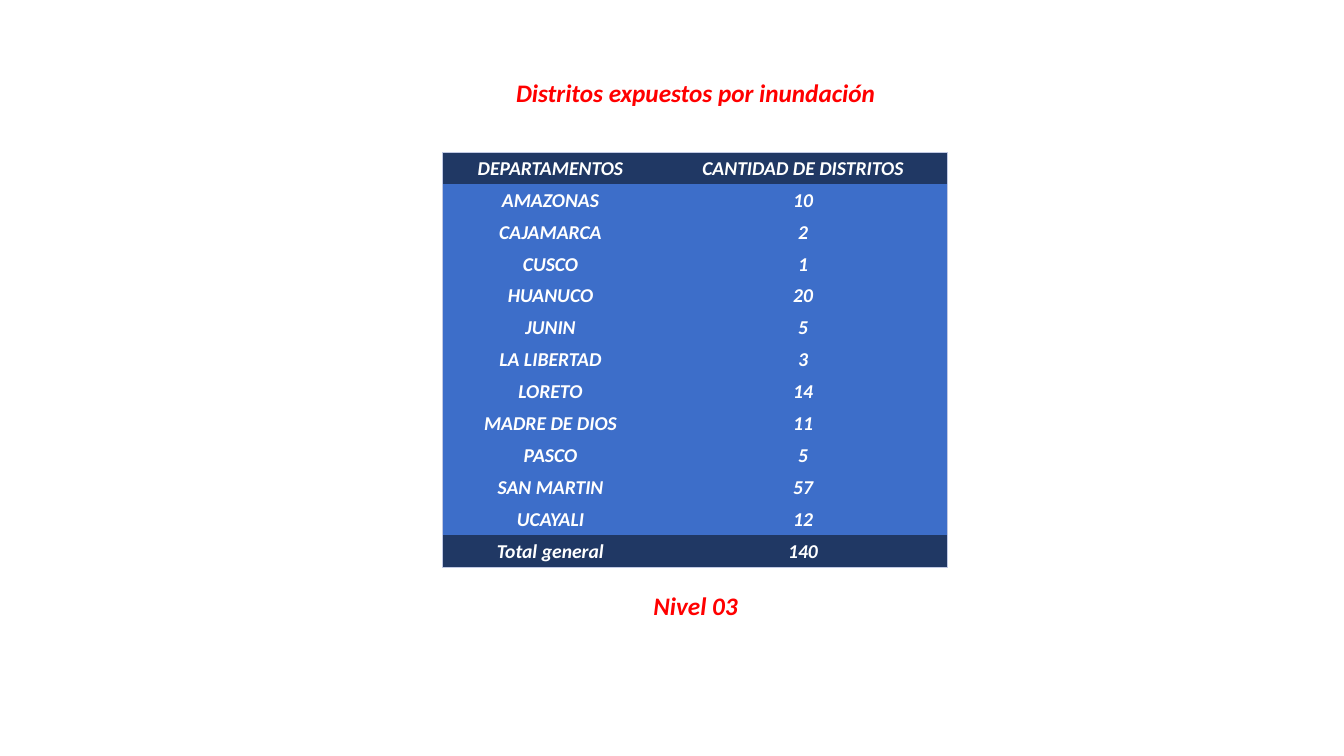
from lxml import etree
from pptx import Presentation
from pptx.dml.color import RGBColor
from pptx.enum.text import MSO_ANCHOR, MSO_AUTO_SIZE, PP_ALIGN
from pptx.oxml.ns import qn
from pptx.util import Inches, Pt

CENTER = PP_ALIGN.CENTER
MIDDLE = MSO_ANCHOR.MIDDLE
GROW = MSO_AUTO_SIZE.SHAPE_TO_FIT_TEXT

RED = RGBColor(0xFF, 0x00, 0x00)
WHITE = RGBColor(0xFF, 0xFF, 0xFF)
NAVY = RGBColor(0x20, 0x38, 0x64)
BLUE = RGBColor(0x3D, 0x6E, 0xC9)
PALE_BLUE = RGBColor(0xC1, 0xC9, 0xE4)

ROWS = [
    ("DEPARTAMENTOS", "CANTIDAD DE DISTRITOS"),
    ("AMAZONAS", "10"),
    ("CAJAMARCA", "2"),
    ("CUSCO", "1"),
    ("HUANUCO", "20"),
    ("JUNIN", "5"),
    ("LA LIBERTAD", "3"),
    ("LORETO", "14"),
    ("MADRE DE DIOS", "11"),
    ("PASCO", "5"),
    ("SAN MARTIN", "57"),
    ("UCAYALI", "12"),
    ("Total general", "140"),
]
COLUMN_WIDTHS = (2.14, 2.87)
TABLE_HEIGHT = 4.12


def write_text(frame, text, *, size, color, font="Calibri", bold=True, italic=True):
    para = frame.paragraphs[0]
    para.alignment = CENTER
    span = para.add_run()
    span.text = text
    span.font.name = font
    span.font.size = Pt(size)
    span.font.bold = bold
    span.font.italic = italic
    span.font.color.rgb = color


def set_borders(cell, outer_sides):
    """Draw a thin line on the outer sides and clear the other ones."""
    properties = cell._tc.get_or_add_tcPr()
    for position, side in enumerate("LRTB"):
        line = etree.Element(qn(f"a:ln{side}"), w=str(Pt(0.5)))
        if side in outer_sides:
            fill = etree.SubElement(line, qn("a:solidFill"))
            etree.SubElement(fill, qn("a:srgbClr"), val=str(PALE_BLUE))
        else:
            etree.SubElement(line, qn("a:noFill"))
        properties.insert(position, line)


class SlideBuilder:
    def __init__(self, slide):
        self.slide = slide
        self.caption_style = {"size": 18, "color": RED}
        self.cell_style = {"size": 14, "color": WHITE}

    def caption(self, text, left, top, width, height, wrap=True):
        box = self.slide.shapes.add_textbox(
            Inches(left), Inches(top), Inches(width), Inches(height))
        frame = box.text_frame
        frame.word_wrap = wrap
        frame.auto_size = GROW
        write_text(frame, text, **self.caption_style)

    def table(self, rows, left, top, column_widths, height):
        table = self.slide.shapes.add_table(
            len(rows), len(column_widths), Inches(left), Inches(top),
            Inches(sum(column_widths)), Inches(height)).table
        for column, width in zip(table.columns, column_widths):
            column.width = Inches(width)
        last_row, last_column = len(rows) - 1, len(column_widths) - 1
        for r, values in enumerate(rows):
            table.rows[r].height = Inches(height / len(rows))
            for c, value in enumerate(values):
                edges = {"L": c == 0, "R": c == last_column,
                         "T": r == 0, "B": r == last_row}
                outer_sides = [side for side, is_outer in edges.items() if is_outer]
                color = NAVY if r in (0, last_row) else BLUE
                self.cell(table.cell(r, c), value, color, outer_sides)

    def cell(self, cell, text, color, outer_sides):
        cell.margin_left = cell.margin_right = cell.margin_top = Inches(0.01)
        cell.margin_bottom = 0
        cell.vertical_anchor = MIDDLE
        cell.fill.solid()
        cell.fill.fore_color.rgb = color
        set_borders(cell, outer_sides)
        write_text(cell.text_frame, text, **self.cell_style)


def main():
    deck = Presentation()
    deck.slide_width, deck.slide_height = Inches(13.33), Inches(7.5)
    page = SlideBuilder(deck.slides.add_slide(deck.slide_layouts[6]))
    page.caption("Distritos expuestos por inundación", 5, 0.72, 3.8, 0.4, wrap=False)
    page.caption("Nivel 03", 6.3, 5.81, 1.2, 0.4)
    page.table(ROWS, 4.39, 1.51, COLUMN_WIDTHS, TABLE_HEIGHT)
    deck.save("out.pptx")


if __name__ == "__main__":
    main()
